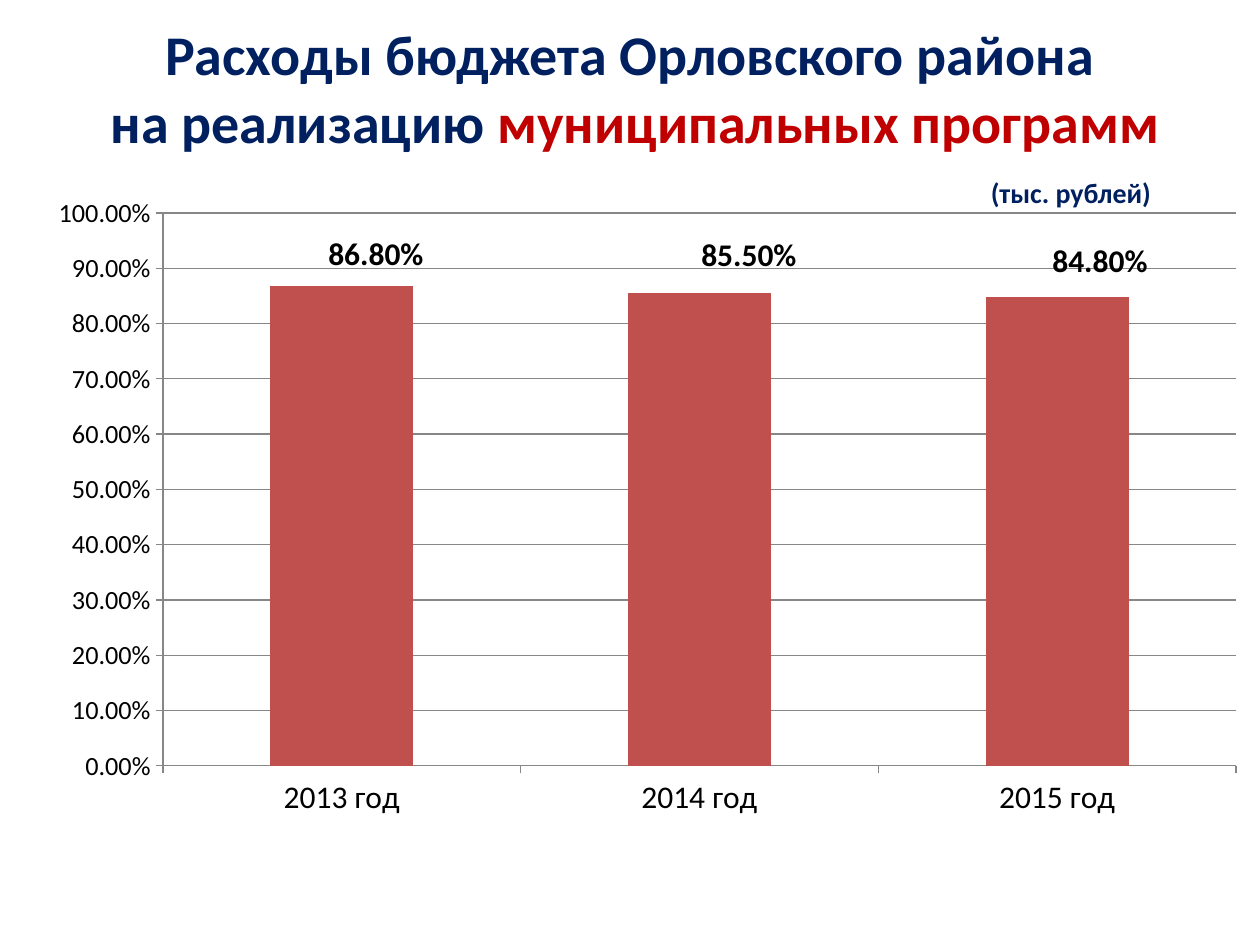
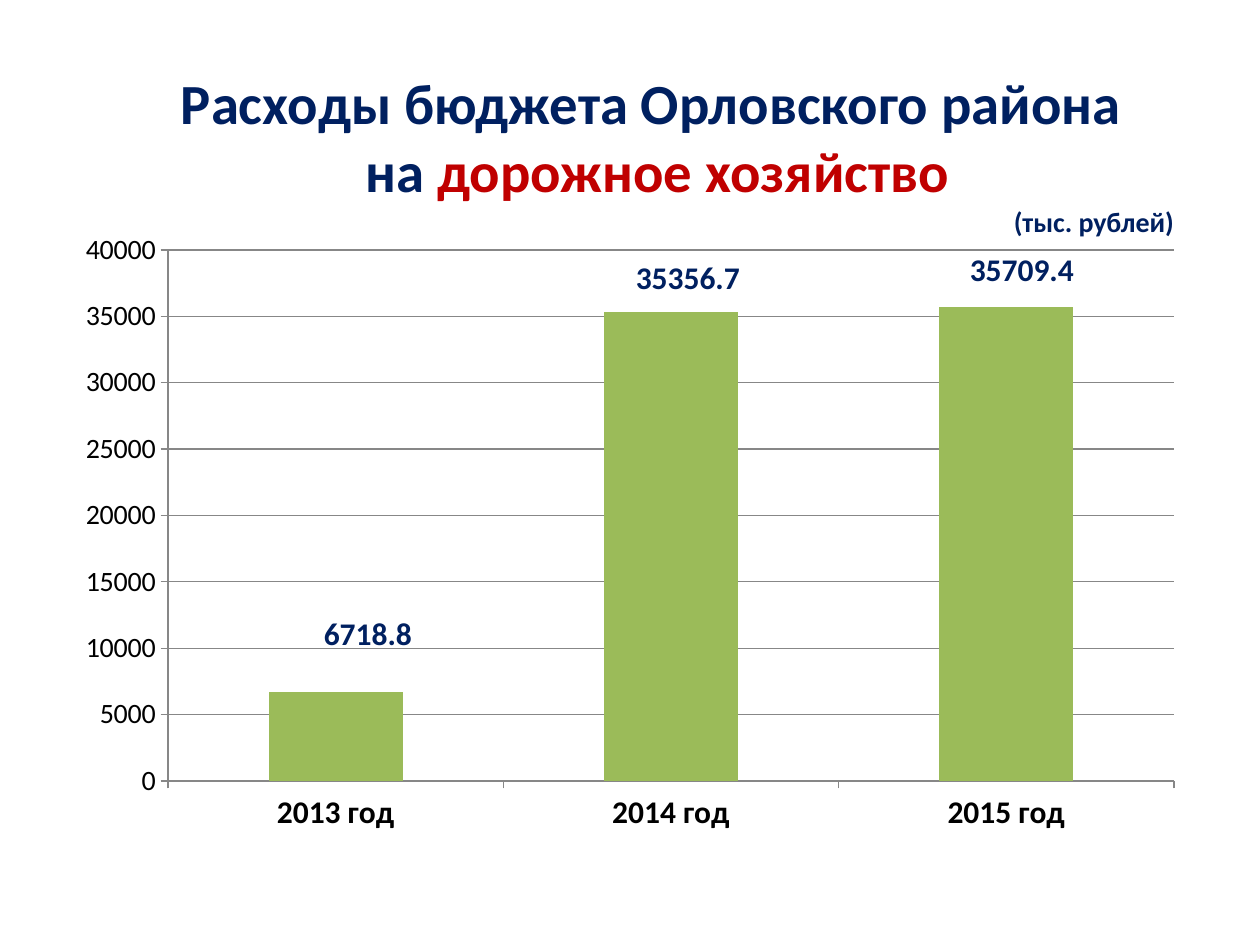
"""Build two slides of district budget spending, each a title over a column chart."""
from dataclasses import dataclass

from lxml import etree
from pptx import Presentation
from pptx.chart.data import CategoryChartData
from pptx.dml.color import RGBColor
from pptx.enum.chart import XL_CHART_TYPE, XL_LABEL_POSITION, XL_TICK_MARK
from pptx.enum.text import MSO_ANCHOR, PP_ALIGN
from pptx.oxml.ns import qn
from pptx.util import Pt

COLUMN = XL_CHART_TYPE.COLUMN_STACKED
OUTSIDE, NO_TICK = XL_TICK_MARK.OUTSIDE, XL_TICK_MARK.NONE
CENTER_LABEL = XL_LABEL_POSITION.CENTER
TOP = MSO_ANCHOR.TOP
CENTER, RIGHT = PP_ALIGN.CENTER, PP_ALIGN.RIGHT


@dataclass(frozen=True)
class Theme:
    font: str = "Calibri"
    navy: str = "002060"
    red: str = "C00000"
    black: str = "000000"
    grid: str = "878787"
    brick: str = "C0504D"
    green: str = "9BBB59"
    unit_size: float = 16
    label_size: float = 18


THEME = Theme()
EMU_PER_PX = 914400 // 126
SLIDE_W, SLIDE_H = 1260, 945
GAP_WIDTH = 150
TITLE_START = "Расходы бюджета Орловского района"
UNIT = "(тыс. рублей)"
YEARS = ["2013 год", "2014 год", "2015 год"]

SLIDES = [
    dict(
        title_end=("на реализацию ", "муниципальных программ"),
        title_box=(63, 20, 1134, 140), title_size=32, title_indent=11,
        unit_box=(851, 176, 300, 36),
        chart_box=(35, 185, 1225, 645), plot_box=(163, 213, 1073, 553),
        values=[0.868, 0.855, 0.848], top=1, step=0.1, number_format="0.00%",
        bar=THEME.brick, label_color=THEME.black, axis_size=15, bold_years=False,
        label_centers=[(376, 254), (749, 255), (1100, 261)],
    ),
    dict(
        title_end=("на ", "дорожное хозяйство"),
        title_box=(84, 68, 1134, 140), title_size=32.4, title_indent=13,
        unit_box=(874, 205, 300, 36),
        chart_box=(63, 220, 1134, 624), plot_box=(168, 250, 1006, 531),
        values=[6718.8, 35356.7, 35709.4], top=40000, step=5000, number_format="General",
        bar=THEME.green, label_color=THEME.navy, axis_size=16, bold_years=True,
        label_centers=[(368, 634), (688, 278), (1022, 270)],
    ),
]


def px(*lengths):
    return [length * EMU_PER_PX for length in lengths]


def style(font, size, color, bold):
    font.name, font.size, font.bold = THEME.font, Pt(size), bold
    font.color.rgb = RGBColor.from_string(color)


def add_text(slide, box, lines, size, align):
    tf = slide.shapes.add_textbox(*px(*box)).text_frame
    tf.word_wrap = True
    tf.vertical_anchor = TOP
    tf.margin_left = tf.margin_right = tf.margin_top = tf.margin_bottom = 0
    for i, line in enumerate(lines):
        p = tf.add_paragraph() if i else tf.paragraphs[0]
        p.alignment = align
        for text, color in line:
            r = p.add_run()
            r.text = text
            style(r.font, size, color, True)
    return tf


def add_layout(parent, index, **settings):
    for old in parent.findall(qn("c:layout")):
        parent.remove(old)
    layout = etree.Element(qn("c:layout"))
    manual = etree.SubElement(layout, qn("c:manualLayout"))
    for tag, value in settings.items():
        text = value if isinstance(value, str) else f"{value:.4f}"
        etree.SubElement(manual, qn(f"c:{tag}")).set("val", text)
    parent.insert(index, layout)


def format_axis(axis, size, bold, tick):
    style(axis.tick_labels.font, size, THEME.black, bold)
    axis.major_tick_mark, axis.minor_tick_mark = tick, NO_TICK
    axis.format.line.color.rgb = RGBColor.from_string(THEME.grid)
    axis.format.line.width = Pt(0.75)


def place_labels(series, s):
    _, _, chart_w, chart_h = s["chart_box"]
    left, top, width, height = s["plot_box"]
    slot = width / len(YEARS)
    for i, (value, (x, y)) in enumerate(zip(s["values"], s["label_centers"])):
        label = series.points[i].data_label
        style(label.font, THEME.label_size, s["label_color"], True)
        label.position = CENTER_LABEL
        bar_x = left + slot * (i + 0.5)
        bar_y = top + height * (1 - value / s["top"] / 2)
        element = series._element.xpath(f"c:dLbls/c:dLbl[c:idx/@val='{i}']")[0]
        add_layout(element, 1, x=(x - bar_x) / chart_w, y=(y - bar_y) / chart_h)
    hide_leader_lines(series)


def hide_leader_lines(series):
    labels = series._element.find(qn("c:dLbls"))
    leader = labels.find(qn("c:showLeaderLines"))
    if leader is None:
        leader = etree.SubElement(labels, qn("c:showLeaderLines"))
    leader.set("val", "0")


def add_column_chart(slide, s):
    data = CategoryChartData(number_format=s["number_format"])
    data.categories = YEARS
    data.add_series("Series 1", s["values"])
    chart = slide.shapes.add_chart(COLUMN, *px(*s["chart_box"]), data).chart
    chart.has_legend = chart.has_title = False
    chart.font.name, chart.font.size = THEME.font, Pt(10)

    plot = chart.plots[0]
    plot.gap_width, plot.overlap, plot.vary_by_categories = GAP_WIDTH, 100, False
    series = plot.series[0]
    series.format.fill.solid()
    series.format.fill.fore_color.rgb = RGBColor.from_string(s["bar"])
    place_labels(series, s)

    format_axis(chart.category_axis, THEME.label_size, s["bold_years"], OUTSIDE)
    axis = chart.value_axis
    format_axis(axis, s["axis_size"], False, OUTSIDE)
    axis.minimum_scale, axis.maximum_scale, axis.major_unit = 0, s["top"], s["step"]
    axis.tick_labels.number_format = s["number_format"]
    axis.tick_labels.number_format_is_linked = False
    axis.has_major_gridlines = True
    line = axis.major_gridlines.format.line
    line.color.rgb, line.width = RGBColor.from_string(THEME.grid), Pt(0.75)

    left, top, width, height = s["chart_box"]
    plot_left, plot_top, plot_w, plot_h = s["plot_box"]
    area = chart._chartSpace.xpath("c:chart/c:plotArea")[0]
    add_layout(area, 0, layoutTarget="inner", xMode="edge", yMode="edge",
               x=(plot_left - left) / width, y=(plot_top - top) / height,
               w=plot_w / width, h=plot_h / height)


def build_slide(prs, s):
    slide = prs.slides.add_slide(prs.slide_layouts[6])
    lead, topic = s["title_end"]
    lines = [[(TITLE_START, THEME.navy)], [(lead, THEME.navy), (topic, THEME.red)]]
    tf = add_text(slide, s["title_box"], lines, s["title_size"], CENTER)
    indent, = px(s["title_indent"])
    tf.paragraphs[1]._p.get_or_add_pPr().set("marL", str(indent))
    add_column_chart(slide, s)
    add_text(slide, s["unit_box"], [[(UNIT, THEME.navy)]], THEME.unit_size, RIGHT)


def main():
    prs = Presentation()
    prs.slide_width, prs.slide_height = px(SLIDE_W, SLIDE_H)
    for s in SLIDES:
        build_slide(prs, s)
    prs.save("out.pptx")


if __name__ == "__main__":
    main()
